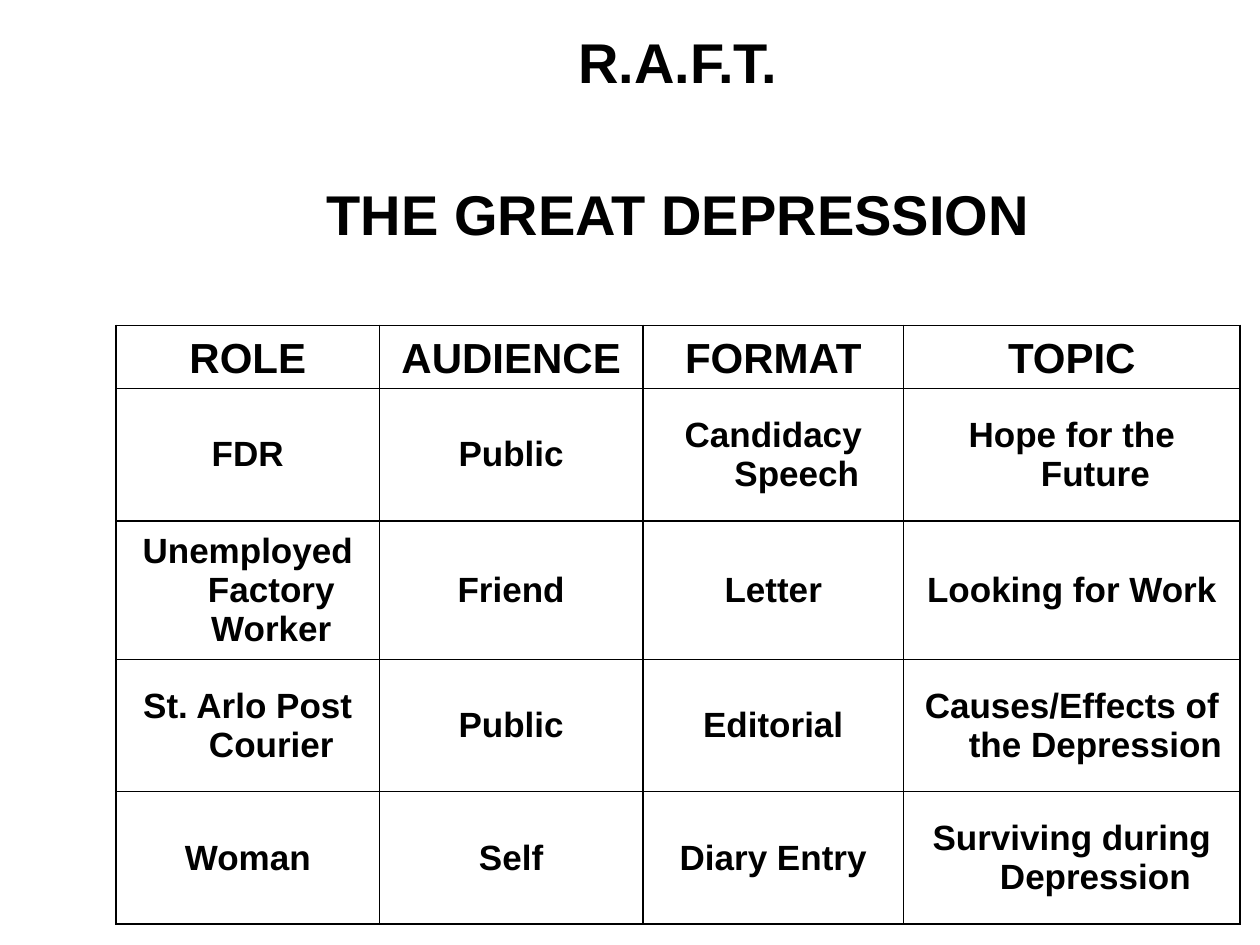
from lxml import etree
from pptx import Presentation
from pptx.dml.color import RGBColor
from pptx.enum.text import MSO_ANCHOR, PP_ALIGN
from pptx.oxml.ns import qn
from pptx.util import Cm, Pt

CENTER = PP_ALIGN.CENTER
BOTTOM = MSO_ANCHOR.BOTTOM
MIDDLE = MSO_ANCHOR.MIDDLE

COLORS = {"ink": "000000", "paper": "FFFFFF"}
FONT = "Arial"
HANGING = Cm(0.95)
RULE_WIDTH = Pt(1)

COLUMN_WIDTHS = [5.31, 5.31, 5.26, 0.51, 6.27]
ROW_HEIGHTS = [1.6, 1.45, 1.6, 1.45, 1.27, 2.67, 2.79, 2.67, 2.67]
TITLES = {0: "R.A.F.T.", 2: "THE GREAT DEPRESSION"}
HEADER_ROW = 4
HEADINGS = ["ROLE", "AUDIENCE", "FORMAT", "TOPIC"]
ASSIGNMENTS = [
    ["FDR", "Public", "Candidacy Speech", "Hope for the Future"],
    ["Unemployed Factory Worker", "Friend", "Letter", "Looking for Work"],
    ["St. Arlo Post Courier", "Public", "Editorial", "Causes/Effects of the Depression"],
    ["Woman", "Self", "Diary Entry", "Surviving during Depression"],
]


def write_cell(cell, text, size, anchor):
    cell.vertical_anchor = anchor
    paragraph = cell.text_frame.paragraphs[0]
    paragraph.alignment = CENTER
    properties = paragraph._p.get_or_add_pPr()
    properties.set("marL", str(HANGING))
    properties.set("indent", str(-HANGING))
    run = paragraph.add_run()
    run.text = text
    run.font.name = FONT
    run.font.size = Pt(size)
    run.font.bold = True
    run.font.color.rgb = RGBColor.from_string(COLORS["ink"])


def rule_cell(cell, sides):
    properties = cell._tc.get_or_add_tcPr()
    for position, side in enumerate(sides):
        line = etree.Element(qn(f"a:ln{side}"), w=str(RULE_WIDTH))
        fill = etree.SubElement(line, qn("a:solidFill"))
        etree.SubElement(fill, qn("a:srgbClr"), val=COLORS["ink"])
        properties.insert(position, line)


def add_raft_table(slide, left, top):
    table = slide.shapes.add_table(
        len(ROW_HEIGHTS), len(COLUMN_WIDTHS), left, top,
        Cm(sum(COLUMN_WIDTHS)), Cm(sum(ROW_HEIGHTS)),
    ).table
    table.first_row = False
    table.horz_banding = False
    for column, width in zip(table.columns, COLUMN_WIDTHS):
        column.width = Cm(width)
    for row, height in zip(table.rows, ROW_HEIGHTS):
        row.height = Cm(height)

    for row_index, row in enumerate(table.rows):
        for cell in row.cells:
            cell.fill.background()
            if row_index >= HEADER_ROW:
                rule_cell(cell, "LRTB")
            elif row_index == HEADER_ROW - 1:
                rule_cell(cell, "B")

    for row_index, title in TITLES.items():
        table.cell(row_index, 0).merge(table.cell(row_index, 4))
        write_cell(table.cell(row_index, 0), title, 32, BOTTOM)
    table.cell(1, 2).merge(table.cell(1, 3))
    for row_index in range(HEADER_ROW - 1, len(ROW_HEIGHTS)):
        table.cell(row_index, 3).merge(table.cell(row_index, 4))

    for column_index, heading in enumerate(HEADINGS):
        write_cell(table.cell(HEADER_ROW, column_index), heading, 24, BOTTOM)
    for row_index, assignment in enumerate(ASSIGNMENTS, HEADER_ROW + 1):
        for column_index, entry in enumerate(assignment):
            write_cell(table.cell(row_index, column_index), entry, 20, MIDDLE)


def main():
    presentation = Presentation()
    presentation.slide_width = Cm(25.4)
    presentation.slide_height = Cm(19.05)
    slide = presentation.slides.add_slide(presentation.slide_layouts[6])
    background = slide.background.fill
    background.solid()
    background.fore_color.rgb = RGBColor.from_string(COLORS["paper"])
    add_raft_table(slide, Cm(2.34), Cm(0.46))
    presentation.save("out.pptx")


if __name__ == "__main__":
    main()
